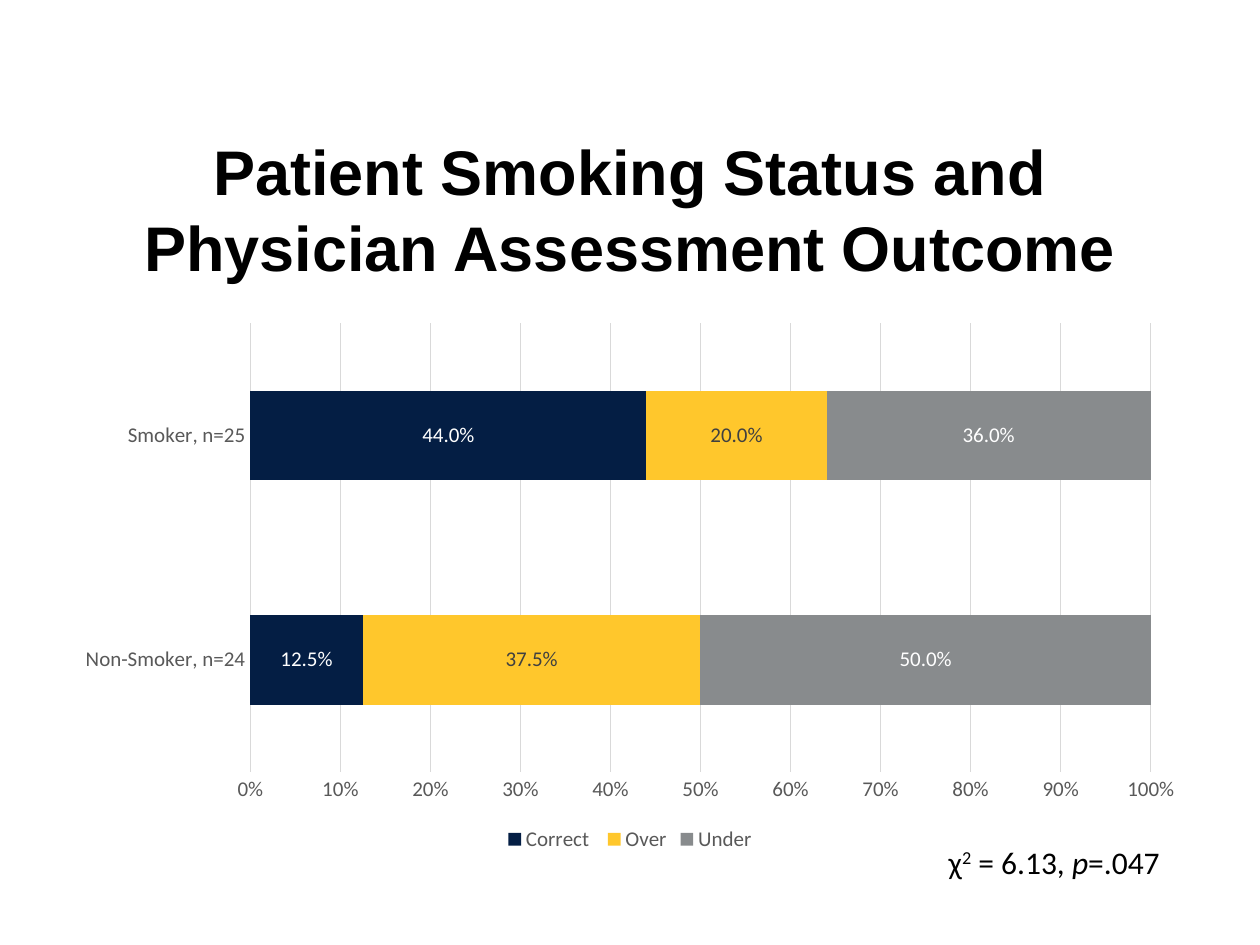
from dataclasses import dataclass

from pptx import Presentation
from pptx.chart.data import CategoryChartData
from pptx.dml.color import RGBColor
from pptx.enum.chart import XL_CHART_TYPE, XL_LABEL_POSITION, XL_LEGEND_POSITION, XL_TICK_MARK
from pptx.enum.text import MSO_ANCHOR, MSO_AUTO_SIZE, PP_ALIGN
from pptx.util import Inches, Pt

STACKED_BAR = XL_CHART_TYPE.BAR_STACKED_100
LABEL_CENTER = XL_LABEL_POSITION.CENTER
LEGEND_BOTTOM = XL_LEGEND_POSITION.BOTTOM
NO_TICK = XL_TICK_MARK.NONE
MIDDLE = MSO_ANCHOR.MIDDLE
FIT_SHAPE = MSO_AUTO_SIZE.SHAPE_TO_FIT_TEXT
CENTER = PP_ALIGN.CENTER
TITLE_ONLY = 5


@dataclass(frozen=True)
class Theme:
    title_font: str = "Arial"
    body_font: str = "Calibri"
    title_size: int = 36
    note_size: int = 18
    chart_size: int = 12
    black: str = "000000"
    white: str = "FFFFFF"
    axis_text: str = "595959"
    dark_label: str = "404040"
    grid: str = "D9D9D9"
    navy: str = "041E44"
    gold: str = "FFC72C"
    gray: str = "888B8D"


class SlideBuilder:
    def __init__(self, slide, theme):
        self.slide = slide
        self.theme = theme

    def style_font(self, font, name, size, color, bold=None):
        font.name = name
        font.size = Pt(size)
        font.color.rgb = RGBColor.from_string(color)
        font.bold = bold

    def style_chart_font(self, font, color):
        self.style_font(font, self.theme.body_font, self.theme.chart_size, color)

    def style_line(self, line):
        line.color.rgb = RGBColor.from_string(self.theme.grid)
        line.width = Pt(0.75)

    def add_title(self, text, left, top, width, height):
        title = self.slide.shapes.title
        title.left, title.top, title.width, title.height = left, top, width, height
        frame = title.text_frame
        frame.text = text
        frame.word_wrap = True
        frame.vertical_anchor = MIDDLE
        paragraph = frame.paragraphs[0]
        paragraph.alignment = CENTER
        self.style_font(paragraph.font, self.theme.title_font, self.theme.title_size,
                        self.theme.black, True)

    def add_stacked_bars(self, categories, series_rows, left, top, width, height):
        data = CategoryChartData(number_format="0.0%")
        data.categories = categories
        for name, values, _, _ in series_rows:
            data.add_series(name, values)
        chart = self.slide.shapes.add_chart(STACKED_BAR, left, top, width, height, data).chart
        self.style_chart_font(chart.font, self.theme.axis_text)
        chart.has_title = False
        chart.has_legend = True
        chart.legend.position = LEGEND_BOTTOM
        chart.legend.include_in_layout = False
        self.style_chart_font(chart.legend.font, self.theme.axis_text)

        plot = chart.plots[0]
        plot.gap_width = 150
        plot.overlap = 100
        plot.vary_by_categories = False
        for series, (_, _, color, label_color) in zip(plot.series, series_rows):
            series.format.fill.solid()
            series.format.fill.fore_color.rgb = RGBColor.from_string(color)
            labels = series.data_labels
            labels.show_value = True
            labels.number_format = "0.0%"
            labels.number_format_is_linked = False
            labels.position = LABEL_CENTER
            self.style_chart_font(labels.font, label_color)

        for axis in (chart.category_axis, chart.value_axis):
            axis.major_tick_mark = NO_TICK
            axis.minor_tick_mark = NO_TICK
            self.style_chart_font(axis.tick_labels.font, self.theme.axis_text)
        self.style_line(chart.category_axis.format.line)
        value_axis = chart.value_axis
        value_axis.format.line.fill.background()
        value_axis.has_major_gridlines = True
        self.style_line(value_axis.major_gridlines.format.line)
        value_axis.minimum_scale = 0
        value_axis.maximum_scale = 1
        value_axis.major_unit = 0.1
        value_axis.tick_labels.number_format = "0%"
        value_axis.tick_labels.number_format_is_linked = False

    def add_statistic(self, pieces, left, top, width, height):
        frame = self.slide.shapes.add_textbox(left, top, width, height).text_frame
        frame.word_wrap = False
        frame.auto_size = FIT_SHAPE
        paragraph = frame.paragraphs[0]
        self.style_font(paragraph.font, self.theme.body_font, self.theme.note_size,
                        self.theme.black)
        for text, style in pieces:
            run = paragraph.add_run()
            run.text = text
            if style == "italic":
                run.font.italic = True
            elif style == "superscript":
                run._r.get_or_add_rPr().set("baseline", "30000")


def main():
    theme = Theme()
    presentation = Presentation()
    presentation.slide_width = Inches(10)
    presentation.slide_height = Inches(7.5)
    slide = presentation.slides.add_slide(presentation.slide_layouts[TITLE_ONLY])
    builder = SlideBuilder(slide, theme)

    builder.add_title("Patient Smoking Status and Physician Assessment Outcome",
                      Inches(0.5), Inches(1.03), Inches(9), Inches(1.25))
    builder.add_stacked_bars(
        ["Non-Smoker, n=24", "Smoker, n=25"],
        [
            ("Correct ", (0.125, 0.44), theme.navy, theme.white),
            ("Over", (0.375, 0.2), theme.gold, theme.dark_label),
            ("Under", (0.5, 0.36), theme.gray, theme.white),
        ],
        Inches(0.5), Inches(2.48), Inches(9), Inches(4.32))
    builder.add_statistic(
        [("χ", None), ("2", "superscript"), (" = 6.13, ", None), ("p", "italic"),
         ("=.047", None)],
        Inches(7.43), Inches(6.64), Inches(1.91), Inches(0.4))

    presentation.save("out.pptx")


if __name__ == "__main__":
    main()
